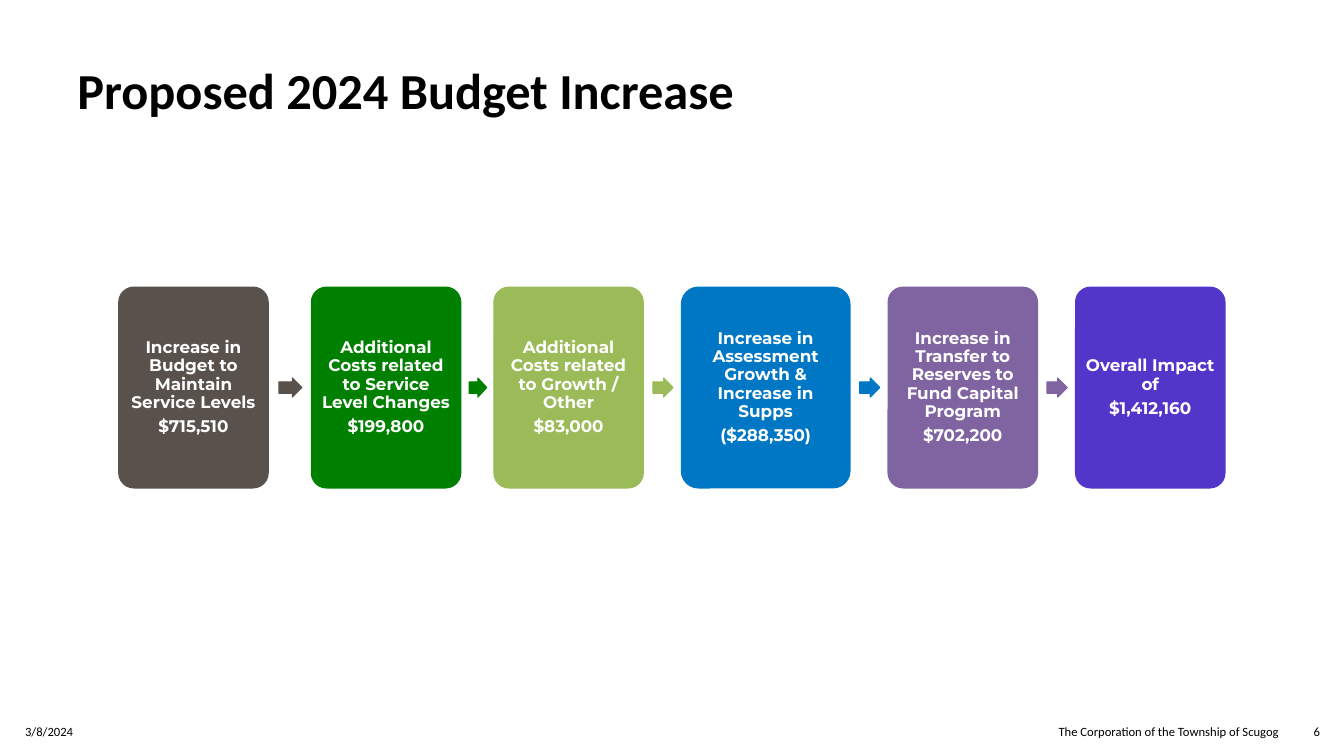
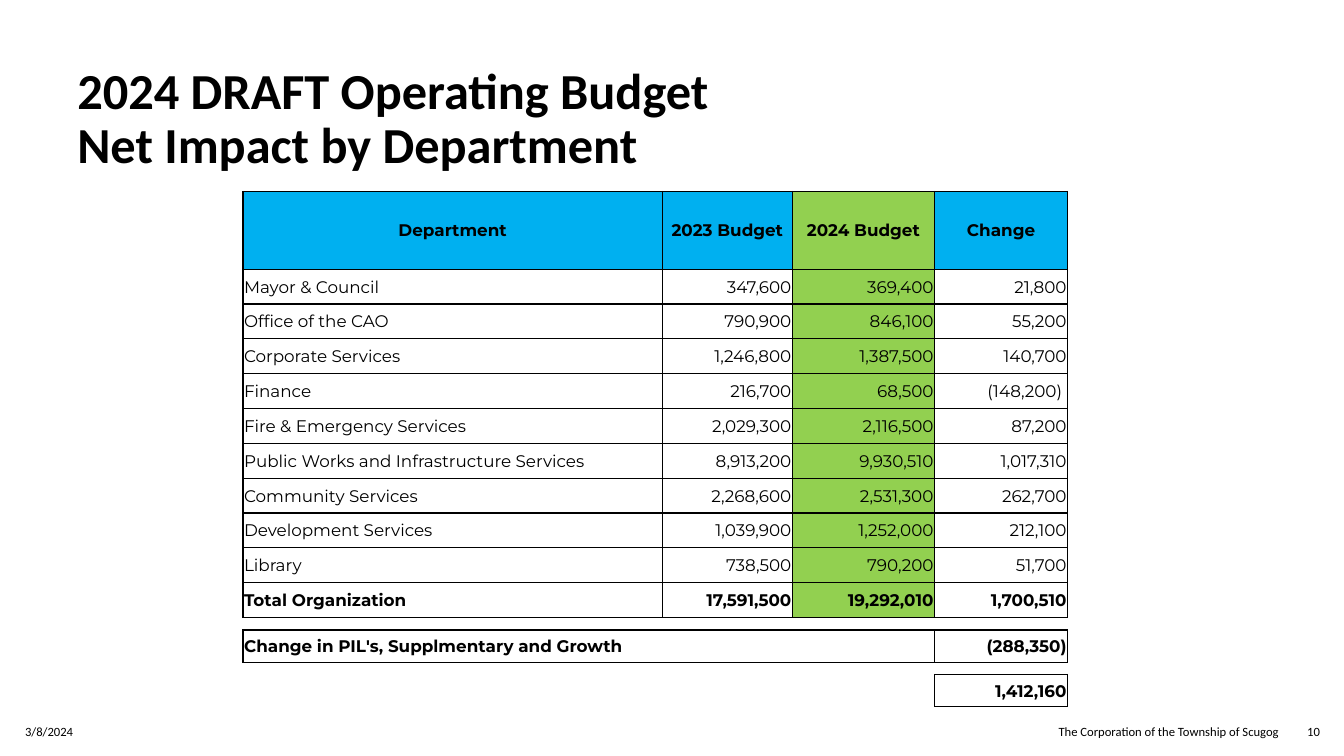
"""Build two budget slides: a flow of increases and a table by department."""
from lxml import etree
from pptx import Presentation
from pptx.dml.color import RGBColor
from pptx.enum.shapes import MSO_SHAPE
from pptx.enum.text import MSO_ANCHOR, MSO_AUTO_SIZE, PP_ALIGN
from pptx.oxml.ns import qn
from pptx.util import Inches, Pt

CARD, ARROW = MSO_SHAPE.ROUNDED_RECTANGLE, MSO_SHAPE.RIGHT_ARROW
LEFT, CENTER, RIGHT = PP_ALIGN.LEFT, PP_ALIGN.CENTER, PP_ALIGN.RIGHT
TOP, MIDDLE = MSO_ANCHOR.TOP, MSO_ANCHOR.MIDDLE

SLIDE_WIDTH, SLIDE_HEIGHT = Inches(13.33), Inches(7.5)
HEADING_FONT, BODY_FONT = "Calibri", "Montserrat"
COLORS = {
    "black": "000000", "white": "FFFFFF", "stone": "59514B",
    "green": "008000", "olive": "9BBB59", "blue": "0077C4",
    "purple": "8064A2", "violet": "5236CA", "sky": "00B0F0",
    "lime": "92D050",
}

CARD_TOP, CARD_HEIGHT = 38, 26.53
CARD_WIDTH, WIDE_CARD_WIDTH = 11.1, 12.53
FLOW_LEFT, ARROW_HEIGHT = 8.85, 2.53
FLOW = [
    ("Increase in Budget to Maintain Service Levels", "$715,510", "stone", CARD_WIDTH, 3.23),
    ("Additional Costs related to Service Level Changes", "$199,800", "green", CARD_WIDTH, 2.48),
    ("Additional Costs related to Growth / Other", "$83,000", "olive", CARD_WIDTH, 2.85),
    ("Increase in Assessment Growth & Increase in Supps", "($288,350)", "blue", WIDE_CARD_WIDTH, 2.85),
    ("Increase in Transfer to Reserves to Fund Capital Program", "$702,200", "purple", CARD_WIDTH, 2.85),
    ("Overall Impact of", "$1,412,160", "violet", CARD_WIDTH, 0),
]

TABLE_LEFT, TABLE_TOP, TABLE_GAP = 18.08, 25.33, 1.63
COLUMNS = [31.2, 9.68, 10.58, 9.9]
HEADER_ROW, BODY_ROW, SUMMARY_ROW = 10.27, 4.61, 4.27
BUDGET = [
    ("Department", "2023 Budget", "2024 Budget", "Change"),
    ("Mayor & Council", "347,600", "369,400", "21,800"),
    ("Office of the CAO", "790,900", "846,100", "55,200"),
    ("Corporate Services", "1,246,800", "1,387,500", "140,700"),
    ("Finance", "216,700", "68,500", "(148,200) "),
    ("Fire & Emergency Services", "2,029,300", "2,116,500", "87,200"),
    ("Public Works and Infrastructure Services", "8,913,200", "9,930,510", "1,017,310"),
    ("Community Services", "2,268,600", "2,531,300", "262,700"),
    ("Development Services", "1,039,900", "1,252,000", "212,100"),
    ("Library", "738,500", "790,200", "51,700"),
    ("Total Organization", "17,591,500", "19,292,010", "1,700,510"),
]


def across(percent):
    """Return a percentage of the slide's width as a length."""
    return round(SLIDE_WIDTH * percent / 100)


def down(percent):
    """Return a percentage of the slide's height as a length."""
    return round(SLIDE_HEIGHT * percent / 100)


def area(left, top, width, height):
    """Return a frame given in percentages as four lengths."""
    return across(left), down(top), across(width), down(height)


def color(name):
    """Return a named colour."""
    return RGBColor.from_string(COLORS[name])


def write(frame, *texts, font=BODY_FONT, size=12, ink="black", bold=False,
          align=LEFT, spacing=None, after=None):
    """Fill a text frame with one formatted paragraph per text."""
    for index, text in enumerate(texts):
        para = frame.add_paragraph() if index else frame.paragraphs[0]
        para.text = text
        para.alignment = align
        para.line_spacing = spacing
        para.space_after = after
        for span in para.runs:
            span.font.name = font
            span.font.size = Pt(size)
            span.font.bold = bold
            span.font.color.rgb = color(ink)


def add_page(deck, title, number):
    """Add a slide with its title and footer."""
    page = deck.slides.add_slide(deck.slide_layouts[5])
    heading = page.shapes.title
    heading.left, heading.top, heading.width, heading.height = area(5, 8, 87.4, 16.5)
    frame = heading.text_frame
    frame.vertical_anchor = TOP
    frame.auto_size = MSO_AUTO_SIZE.NONE
    write(frame, title, font=HEADING_FONT, size=36, bold=True, spacing=0.9)
    add_footer(page, "3/8/2024", 1.13, 28.66, LEFT)
    add_footer(page, "The Corporation of the Township of Scugog", 72.84, 23.03, RIGHT)
    add_footer(page, str(number), 95.42, 3.53, RIGHT)
    return page


def add_footer(page, text, left, width, align):
    """Add one small text to the footer line."""
    frame = page.shapes.add_textbox(*area(left, 94.13, width, 5.33)).text_frame
    frame.word_wrap = True
    frame.vertical_anchor = MIDDLE
    write(frame, text, font=HEADING_FONT, size=9, align=align)


def add_block(page, kind, place, fill, line_width):
    """Add a preset shape in a single colour."""
    block = page.shapes.add_shape(kind, *area(*place))
    block.shadow.inherit = False
    block.fill.solid()
    block.fill.fore_color.rgb = color(fill)
    block.line.color.rgb = color(fill)
    block.line.width = Pt(line_width)
    return block


def add_card(page, left, width, fill, label, amount):
    """Add a rounded card with a label and an amount."""
    card = add_block(page, CARD, (left, CARD_TOP, width, CARD_HEIGHT), fill, 1)
    card.adjustments[0] = 0.1
    frame = card.text_frame
    frame.word_wrap = True
    frame.vertical_anchor = MIDDLE
    frame.margin_left = frame.margin_right = Inches(0.05)
    frame.margin_top = frame.margin_bottom = Inches(0.05)
    write(frame, label, amount, ink="white", bold=True, align=CENTER,
          spacing=0.9, after=Pt(4.2))


def add_flow(page):
    """Add the row of cards, with an arrow in each gap."""
    left = FLOW_LEFT
    arrow_top = CARD_TOP + (CARD_HEIGHT - ARROW_HEIGHT) / 2
    for label, amount, fill, width, gap in FLOW:
        add_card(page, left, width, fill, label, amount)
        left += width
        if gap:
            place = (left + gap * 0.25, arrow_top, gap * 0.53, ARROW_HEIGHT)
            arrow = add_block(page, ARROW, place, fill, 0.75)
            arrow.adjustments[0] = 0.6
        left += gap


def add_borders(cell):
    """Draw a thin black line on each side of a cell."""
    properties = cell._tc.get_or_add_tcPr()
    for side in ("a:lnL", "a:lnR", "a:lnT", "a:lnB"):
        line = etree.SubElement(properties, qn(side), w=str(Pt(1)))
        fill = etree.SubElement(line, qn("a:solidFill"))
        etree.SubElement(fill, qn("a:srgbClr"), val=COLORS["black"])


def format_cell(cell, text, fill=None, **style):
    """Set the text, fill, margins and borders of a cell."""
    add_borders(cell)
    if fill:
        cell.fill.solid()
        cell.fill.fore_color.rgb = color(fill)
    else:
        cell.fill.background()
    cell.margin_left = cell.margin_right = cell.margin_top = Inches(0.01)
    cell.margin_bottom = 0
    cell.vertical_anchor = MIDDLE
    write(cell.text_frame, text, **style)


def add_grid(page, left, top, columns, rows):
    """Add a plain table and return it."""
    place = area(left, top, sum(columns), sum(rows))
    table = page.shapes.add_table(len(rows), len(columns), *place).table
    table.first_row = table.horz_banding = False
    for column, width in zip(table.columns, columns):
        column.width = across(width)
    for row, height in zip(table.rows, rows):
        row.height = down(height)
    return table


def add_budget(page):
    """Add the table of budgets by department."""
    last = len(BUDGET) - 1
    rows = [HEADER_ROW] + [BODY_ROW] * last
    table = add_grid(page, TABLE_LEFT, TABLE_TOP, COLUMNS, rows)
    for row, values in enumerate(BUDGET):
        for column, text in enumerate(values):
            fill = "lime" if column == 2 else "sky" if row == 0 else None
            align = CENTER if row == 0 else RIGHT if column else LEFT
            format_cell(table.cell(row, column), text, fill=fill,
                        bold=row in (0, last), align=align)
    return TABLE_TOP + sum(rows)


def add_summary(page, left, top, columns, values):
    """Add a one-row table that ends with a right-aligned amount."""
    table = add_grid(page, left, top, columns, [SUMMARY_ROW])
    for column, text in enumerate(values):
        align = RIGHT if column == len(values) - 1 else LEFT
        format_cell(table.cell(0, column), text, bold=True, align=align)
    return top + SUMMARY_ROW


def main():
    """Build and save the deck."""
    deck = Presentation()
    deck.slide_width, deck.slide_height = SLIDE_WIDTH, SLIDE_HEIGHT

    add_flow(add_page(deck, "Proposed 2024 Budget Increase", 6))

    page = add_page(deck, "2024 DRAFT Operating Budget\vNet Impact by Department", 10)
    label_width, change_width = sum(COLUMNS[:-1]), COLUMNS[-1]
    bottom = add_budget(page)
    bottom = add_summary(page, TABLE_LEFT, bottom + TABLE_GAP, [label_width, change_width],
                         ["Change in PIL's, Supplmentary and Growth", "(288,350)"])
    add_summary(page, TABLE_LEFT + label_width, bottom + TABLE_GAP, [change_width],
                ["1,412,160"])

    deck.save("out.pptx")


if __name__ == "__main__":
    main()
